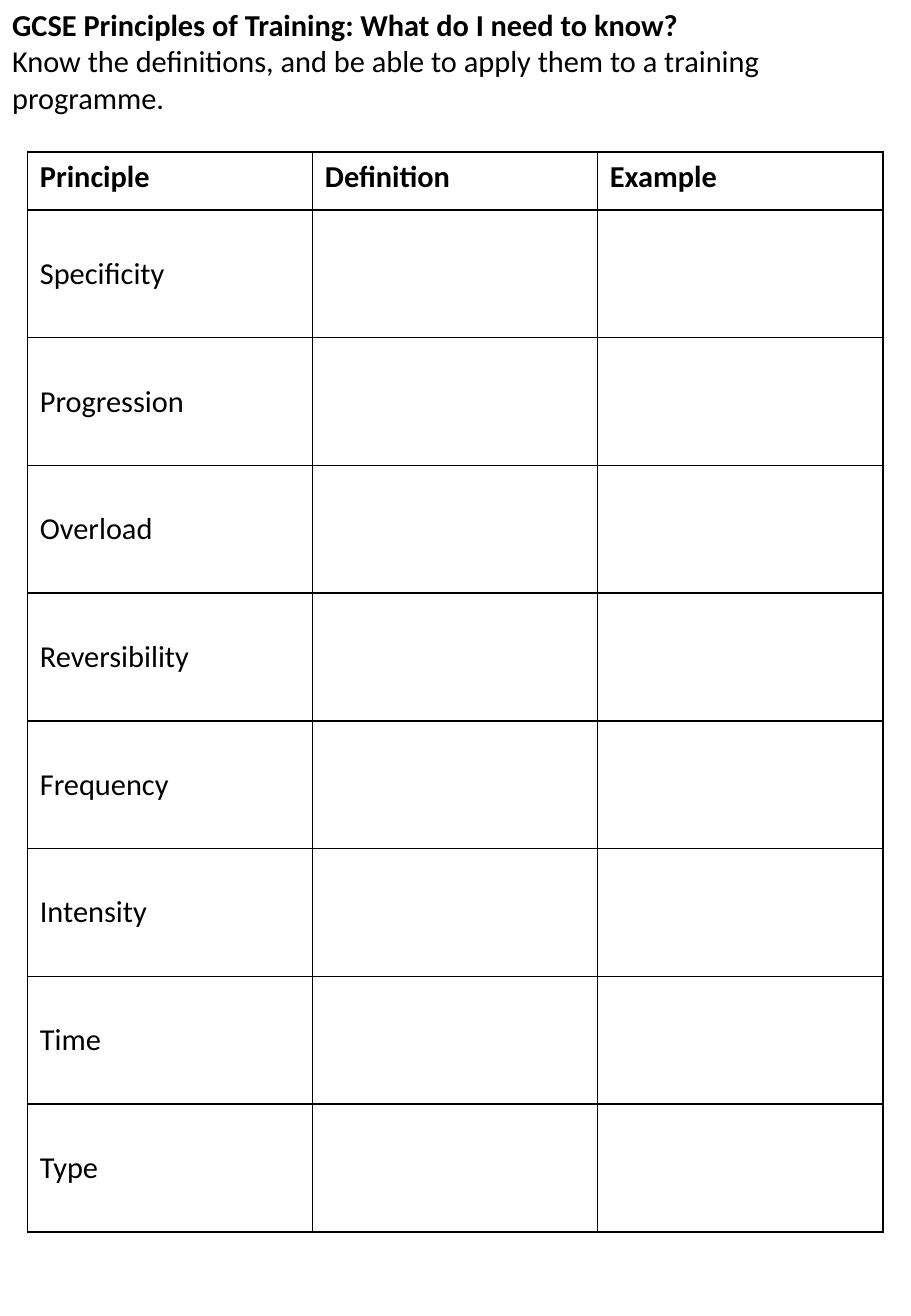
"""Build a one-page GCSE worksheet on the principles of training."""
from lxml import etree
from pptx import Presentation
from pptx import util as u
from pptx.dml import color
from pptx.enum import text
from pptx.oxml import ns

THEME = {
    "ink": color.RGBColor(0, 0, 0),
    "paper": color.RGBColor(255, 255, 255),
    "font": {"name": "Calibri", "size": u.Pt(18)},
    "border": u.Pt(1),
}
HEADINGS = ["Principle", "Definition", "Example"]
PRINCIPLES = ["Specificity", "Progression", "Overload", "Reversibility",
              "Frequency", "Intensity", "Time", "Type"]
COLUMN_WIDTH, HEADING_HEIGHT, PRINCIPLE_HEIGHT = u.Cm(5.96), u.Cm(1.21), u.Cm(2.67)


def write(paragraph, wording, bold):
    run = paragraph.add_run()
    run.text = wording
    for name, value in {**THEME["font"], "bold": bold}.items():
        setattr(run.font, name, value)
    run.font.color.rgb = THEME["ink"]


def add_borders(cell):
    properties = cell._tc.get_or_add_tcPr()
    for side in ("a:lnL", "a:lnR", "a:lnT", "a:lnB"):
        line = etree.SubElement(properties, ns.qn(side), w=str(THEME["border"]))
        fill = etree.SubElement(line, ns.qn("a:solidFill"))
        etree.SubElement(fill, ns.qn("a:srgbClr"), val=str(THEME["ink"]))


prs = Presentation()
prs.slide_width, prs.slide_height = u.Cm(19.05), u.Cm(27.51)
worksheet = prs.slides.add_slide(prs.slide_layouts[5])

intro = worksheet.shapes.title
for name, value in {"left": 0, "top": 0, "width": prs.slide_width,
                    "height": u.Cm(2.57)}.items():
    setattr(intro, name, value)
for name, value in {"word_wrap": True, "auto_size": text.MSO_AUTO_SIZE.NONE,
                    "vertical_anchor": text.MSO_ANCHOR.TOP}.items():
    setattr(intro.text_frame, name, value)
question = intro.text_frame.paragraphs[0]
task = intro.text_frame.add_paragraph()
write(question, "GCSE Principles of Training: What do I need to know?", True)
write(task, "Know the definitions, and be able to apply them to a training programme.", False)
for paragraph in (question, task):
    paragraph.alignment = text.PP_ALIGN.LEFT

grid = worksheet.shapes.add_table(
    len(PRINCIPLES) + 1, len(HEADINGS), u.Cm(0.58), u.Cm(3.18),
    COLUMN_WIDTH * len(HEADINGS),
    HEADING_HEIGHT + PRINCIPLE_HEIGHT * len(PRINCIPLES)).table
grid.first_row = grid.horz_banding = False
for column in grid.columns:
    column.width = COLUMN_WIDTH
for row in grid.rows:
    row.height = PRINCIPLE_HEIGHT
grid.rows[0].height = HEADING_HEIGHT

for cell in grid.iter_cells():
    add_borders(cell)
    cell.fill.solid()
    cell.fill.fore_color.rgb = THEME["paper"]

for index, heading in enumerate(HEADINGS):
    write(grid.cell(0, index).text_frame.paragraphs[0], heading, True)
for index, principle in enumerate(PRINCIPLES, start=1):
    cell = grid.cell(index, 0)
    cell.vertical_anchor = text.MSO_ANCHOR.MIDDLE
    write(cell.text_frame.paragraphs[0], principle, False)

prs.save("out.pptx")
